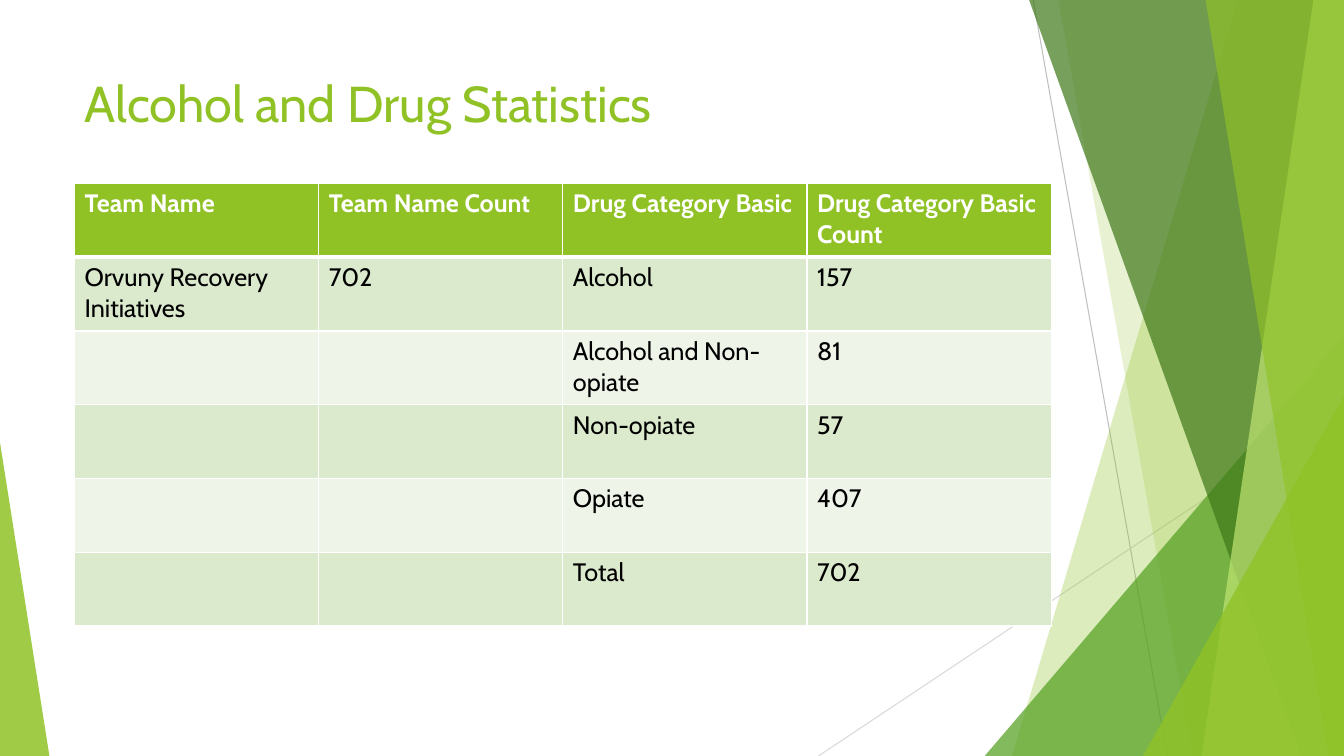
from lxml import etree
from pptx import Presentation
from pptx.dml.color import RGBColor
from pptx.enum.shapes import MSO_CONNECTOR, MSO_SHAPE
from pptx.enum.text import MSO_ANCHOR, PP_ALIGN
from pptx.oxml.ns import qn
from pptx.util import Pt

LINE = MSO_CONNECTOR.STRAIGHT
WEDGE = MSO_SHAPE.ISOSCELES_TRIANGLE
TOP = MSO_ANCHOR.TOP
LEFT = PP_ALIGN.LEFT

HUES = {
    "lime": "90C226", "leaf": "54A021", "moss": "3F7819", "pale": "C0E474",
    "gray": "BFBFBF", "mist": "D9D9D9", "white": "FFFFFF", "black": "000000",
    "band": "DBE9CD", "soft": "EEF4E8",
}
FONTS = {
    "title": {"name": "Cabin", "size": Pt(36), "bold": False},
    "head": {"name": "Cabin", "size": Pt(18), "bold": True},
    "cell": {"name": "Cabin", "size": Pt(18), "bold": False},
}
RAYS = [
    ("gray", 738, 0, 833.76, 540),
    ("mist", 960, 290.2, 584.6, 540),
]
FACETS = [
    ("pane", "lime", 30, 884.2, 722.9),
    ("pane", "lime", 20, 756, 851.8),
    ("wedge", "leaf", 72, 703.4, 239.8, 256.6, 1),
    ("pane", "moss", 70, 735.1, 929.5),
    ("pane", "pale", 70, 938.2, 858.2),
    ("pane", "lime", 65, 861.1, 949),
    ("wedge", "lime", 80, 816.5, 283, 143.5, 1),
    ("wedge", "lime", 85, 0, 316.1, 35.3, 0),
]
ROWS = [
    ["Team Name", "Team Name Count", "Drug Category Basic", "Drug Category Basic Count"],
    ["Orvuny Recovery Initiatives", "702", "Alcohol", "157"],
    ["", "", "Alcohol and Non-opiate", "81"],
    ["", "", "Non-opiate", "57"],
    ["", "", "Opiate", "407"],
    ["", "", "Total", "702"],
]


def hue(name):
    """Return the named colour."""
    return RGBColor.from_string(HUES[name])


def style(para, kind, tint):
    """Format a paragraph with a named font and colour."""
    para.alignment = LEFT
    for key, val in FONTS[kind].items():
        setattr(para.font, key, val)
    para.font.color.rgb = hue(tint)


def paint(shape, tint, alpha):
    """Fill a shape with a see-through colour and no line."""
    shape.shadow.inherit = False
    shape.line.fill.background()
    shape.fill.solid()
    shape.fill.fore_color.rgb = hue(tint)
    color = shape.element.spPr.find(qn("a:solidFill"))[0]
    etree.SubElement(color, qn("a:alpha"), val=str(alpha * 1000))


def pane(shapes, box, high, low):
    """Draw a facet from two left corners to the right edge of the box."""
    x, y, w, h = box
    top, base, right = Pt(y), Pt(y + h), Pt(x + w)
    form = shapes.build_freeform(Pt(x + high), top)
    form.add_line_segments([(right, top), (right, base), (Pt(x + low), base)])
    return form.convert_to_shape()


def wedge(shapes, box, left, top, wide, peak):
    """Draw a right triangle that stands on the foot of the box."""
    x, y, _, h = box
    shape = shapes.add_shape(WEDGE, Pt(x + left), Pt(y + top), Pt(wide), Pt(h - top))
    shape.adjustments[0] = peak
    return shape


def decor(shapes, box):
    """Draw the rays and green facets in the box."""
    x, y = box[:2]
    for tint, *ends in RAYS:
        spots = [Pt(val + (x, y)[i % 2]) for i, val in enumerate(ends)]
        ray = shapes.add_connector(LINE, *spots)
        ray.line.width = Pt(0.75)
        ray.line.color.rgb = hue(tint)
        etree.SubElement(ray.element.spPr, qn("a:effectLst"))
    make = {"pane": pane, "wedge": wedge}
    for kind, tint, alpha, *dims in FACETS:
        paint(make[kind](shapes, box, *dims), tint, alpha)


def heading(shapes, box, text):
    """Place the title in the box, in front of the facets."""
    title = shapes.title
    for key, val in zip(("left", "top", "width", "height"), box):
        setattr(title, key, Pt(val))
    title.text_frame.text = text
    title.text_frame.vertical_anchor = TOP
    title.text_frame.word_wrap = True
    style(title.text_frame.paragraphs[0], "title", "lime")
    title.element.getparent().append(title.element)


def edge(cell, side, width):
    """Draw one white border of a cell."""
    props = cell._tc.get_or_add_tcPr()
    line = etree.SubElement(props, qn("a:ln" + side), w=str(Pt(width)))
    fill = etree.SubElement(line, qn("a:solidFill"))
    etree.SubElement(fill, qn("a:srgbClr"), val=HUES["white"])


def grid(shapes, box, rows):
    """Build the banded table, with equal rows and columns, in the box."""
    frame = shapes.add_table(len(rows), len(rows[0]), *map(Pt, box))
    table = frame.table
    for col in table.columns:
        col.width = Pt(box[2] / len(rows[0]))
    for r, row in enumerate(rows):
        table.rows[r].height = Pt(box[3] / len(rows))
        kind, tint = ("cell", "black") if r else ("head", "white")
        back = ("soft", "band")[r % 2] if r else "lime"
        for c, text in enumerate(row):
            cell = table.cell(r, c)
            for side in "LRTB":
                thick = (r, side) in ((0, "B"), (1, "T"))
                edge(cell, side, 3 if thick else 1)
            cell.fill.solid()
            cell.fill.fore_color.rgb = hue(back)
            cell.text = text
            style(cell.text_frame.paragraphs[0], kind, tint)


def main():
    """Build and save the slide."""
    deck = Presentation()
    deck.slide_width, deck.slide_height = Pt(960), Pt(540)
    shapes = deck.slides.add_slide(deck.slide_layouts[5]).shapes
    decor(shapes, (0, 0, 960, 540))
    heading(shapes, (53.3, 48, 676.8, 104), "Alcohol and Drug Statistics")
    grid(shapes, (53.3, 131, 697.6, 316.2), ROWS)
    deck.save("out.pptx")


if __name__ == "__main__":
    main()
